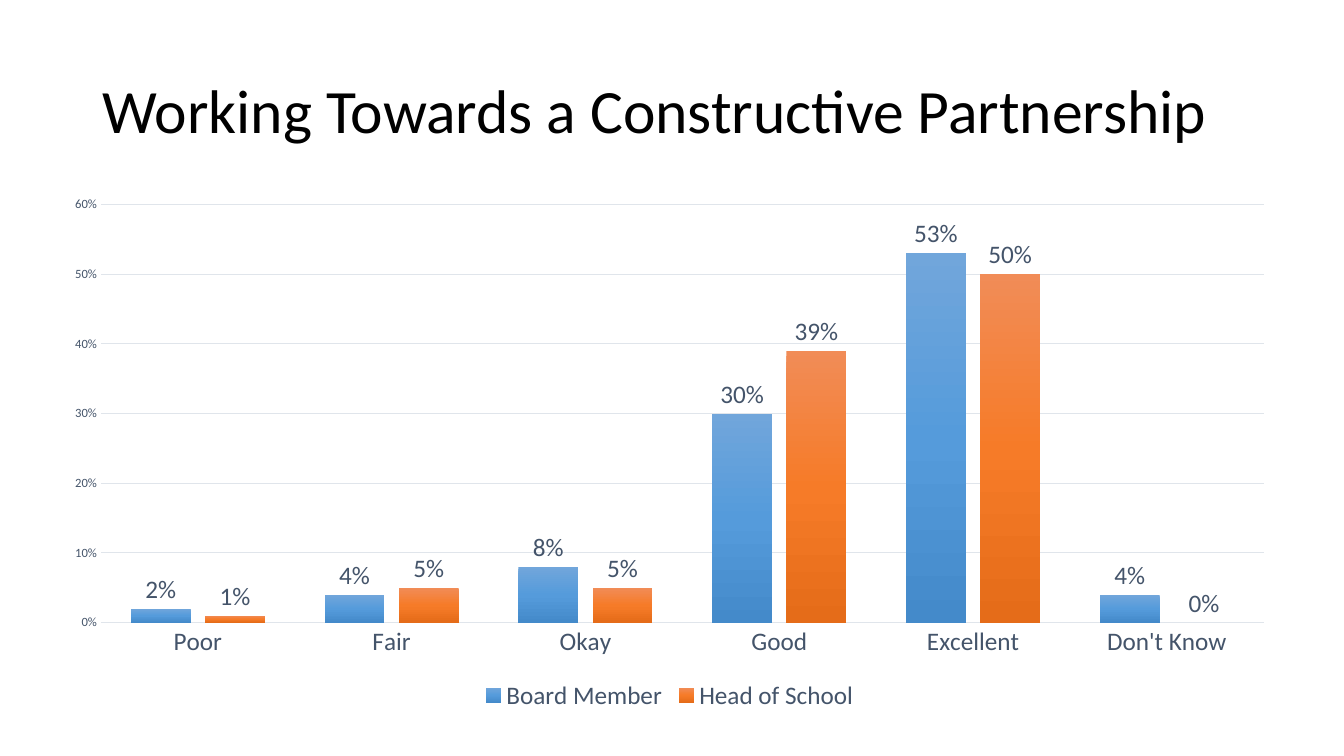
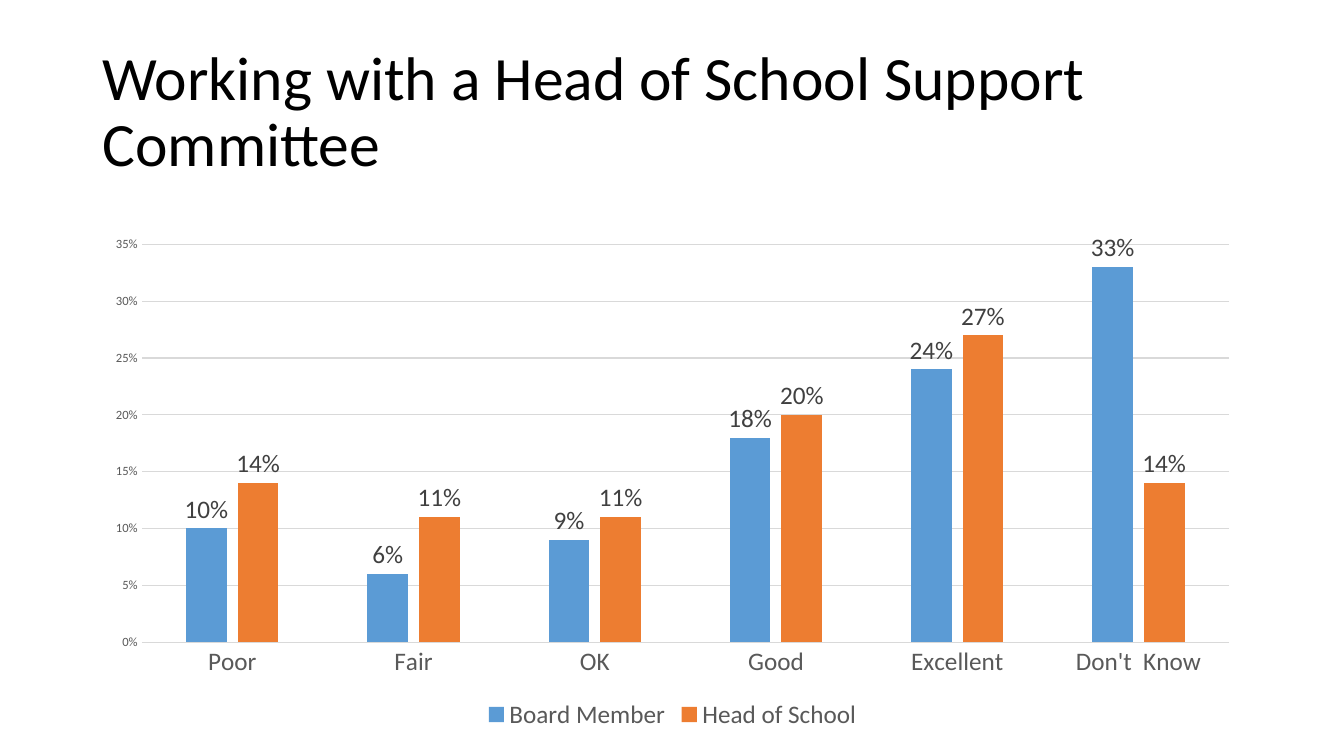
from copy import deepcopy
from dataclasses import dataclass
from typing import Any

from pptx import Presentation
from pptx.chart.data import CategoryChartData
from pptx.dml.color import RGBColor
from pptx.enum.chart import XL_CHART_TYPE, XL_LABEL_POSITION, XL_LEGEND_POSITION, XL_TICK_MARK
from pptx.enum.text import MSO_ANCHOR
from pptx.oxml.ns import qn
from pptx.util import Inches, Pt

COLUMN = XL_CHART_TYPE.COLUMN_CLUSTERED
OUTSIDE = XL_LABEL_POSITION.OUTSIDE_END
BOTTOM = XL_LEGEND_POSITION.BOTTOM
NO_TICK = XL_TICK_MARK.NONE
MIDDLE = MSO_ANCHOR.MIDDLE

FACE = "Calibri"
BLACK = "000000"
PERCENT = "0%"
LARGE, SMALL = 18, 9
TITLE_BOX = (0.92, 0.4, 11.5, 1.45)
GROUPS = ("Board Member", "Head of School")

TITLE_FORMAT = {"word_wrap": True, "vertical_anchor": MIDDLE}
TICK_FORMAT = {"major_tick_mark": NO_TICK, "minor_tick_mark": NO_TICK}
LEGEND_FORMAT = {"position": BOTTOM, "include_in_layout": False}
LABEL_FORMAT = {
    "show_value": True,
    "position": OUTSIDE,
    "number_format": PERCENT,
    "number_format_is_linked": False,
}

Box = tuple[float, float, float, float]
Shades = tuple[str, ...]


@dataclass(frozen=True)
class Survey:
    title: str
    box: Box
    answers: tuple[str, ...]
    values: tuple[tuple[float, ...], ...]
    fills: tuple[Shades, ...]
    ink: str
    label: str
    grid: str
    gap: int
    overlap: int
    top: float
    step: float


SURVEYS = (
    Survey(
        title="Working Towards a Constructive Partnership",
        box=(0.5, 1.85, 12.28, 5.25),
        answers=("Poor", "Fair", "Okay", "Good", "Excellent", "Don't Know"),
        values=((0.02, 0.04, 0.08, 0.3, 0.53, 0.04), (0.01, 0.05, 0.05, 0.39, 0.5, 0)),
        fills=(("71A6DB", "559BDB", "448ACA"), ("F18C57", "F67B28", "E56C19")),
        ink="44546A",
        label="44546A",
        grid="E0E5EB",
        gap=100,
        overlap=-24,
        top=0.6,
        step=0.1,
    ),
    Survey(
        title="Working with a Head of School Support Committee",
        box=(0.92, 2.25, 11.5, 5.04),
        answers=("Poor", "Fair", "OK", "Good", "Excellent", "Don't  Know"),
        values=((0.1, 0.06, 0.09, 0.18, 0.24, 0.33), (0.14, 0.11, 0.11, 0.2, 0.27, 0.14)),
        fills=(("5B9BD5",), ("ED7D31",)),
        ink="595959",
        label="404040",
        grid="D9D9D9",
        gap=219,
        overlap=-27,
        top=0.35,
        step=0.05,
    ),
)


def color(code: str) -> RGBColor:
    return RGBColor.from_string(code)


def apply(target: Any, values: dict[str, Any]) -> None:
    for name, value in values.items():
        setattr(target, name, value)


def set_font(font: Any, size: float, ink: str) -> None:
    apply(font, {"name": FACE, "size": Pt(size)})
    font.color.rgb = color(ink)


def set_line(line: Any, ink: str) -> None:
    line.color.rgb = color(ink)
    line.width = Pt(0.75)


def add_title(slide: Any, text: str) -> None:
    frame = slide.shapes.add_textbox(*map(Inches, TITLE_BOX)).text_frame
    apply(frame, TITLE_FORMAT)
    para = frame.paragraphs[0]
    para.line_spacing = 0.9
    run = para.add_run()
    run.text = text
    set_font(run.font, 44, BLACK)


def paint(series: Any, shades: Shades) -> None:
    fill = series.format.fill
    if len(shades) == 1:
        fill.solid()
        fill.fore_color.rgb = color(shades[0])
        return
    fill.gradient()
    fill.gradient_angle = 270
    stops = next(series._element.iter(qn("a:gsLst")))
    for _ in range(len(shades) - len(stops)):
        stops.insert(1, deepcopy(stops[0]))
    for index, (stop, shade) in enumerate(zip(fill.gradient_stops, shades)):
        stop.position = index / (len(shades) - 1)
        stop.color.rgb = color(shade)


def style_axes(chart: Any, survey: Survey) -> None:
    for axis, size in ((chart.category_axis, LARGE), (chart.value_axis, SMALL)):
        apply(axis, TICK_FORMAT)
        set_font(axis.tick_labels.font, size, survey.ink)
    set_line(chart.category_axis.format.line, survey.grid)
    scale = chart.value_axis
    apply(scale, {
        "minimum_scale": 0,
        "maximum_scale": survey.top,
        "major_unit": survey.step,
        "has_major_gridlines": True,
    })
    apply(scale.tick_labels, {"number_format": PERCENT, "number_format_is_linked": False})
    scale.format.line.fill.background()
    set_line(scale.major_gridlines.format.line, survey.grid)


def add_columns(slide: Any, survey: Survey) -> None:
    data = CategoryChartData(number_format=PERCENT)
    data.categories = survey.answers
    for name, values in zip(GROUPS, survey.values):
        data.add_series(name, values)
    chart = slide.shapes.add_chart(COLUMN, *map(Inches, survey.box), data).chart
    apply(chart, {"has_title": False, "has_legend": True})
    set_font(chart.font, 10, BLACK)
    apply(chart.legend, LEGEND_FORMAT)
    set_font(chart.legend.font, LARGE, survey.ink)
    style_axes(chart, survey)
    plot = chart.plots[0]
    apply(plot, {
        "gap_width": survey.gap,
        "overlap": survey.overlap,
        "vary_by_categories": False,
    })
    for series, shades in zip(plot.series, survey.fills):
        series.invert_if_negative = False
        paint(series, shades)
        apply(series.data_labels, LABEL_FORMAT)
        set_font(series.data_labels.font, LARGE, survey.label)


def main() -> None:
    deck = Presentation()
    apply(deck, {"slide_width": Inches(13.33), "slide_height": Inches(7.5)})
    for survey in SURVEYS:
        slide = deck.slides.add_slide(deck.slide_layouts[6])
        add_title(slide, survey.title)
        add_columns(slide, survey)
    deck.save("out.pptx")


if __name__ == "__main__":
    main()
